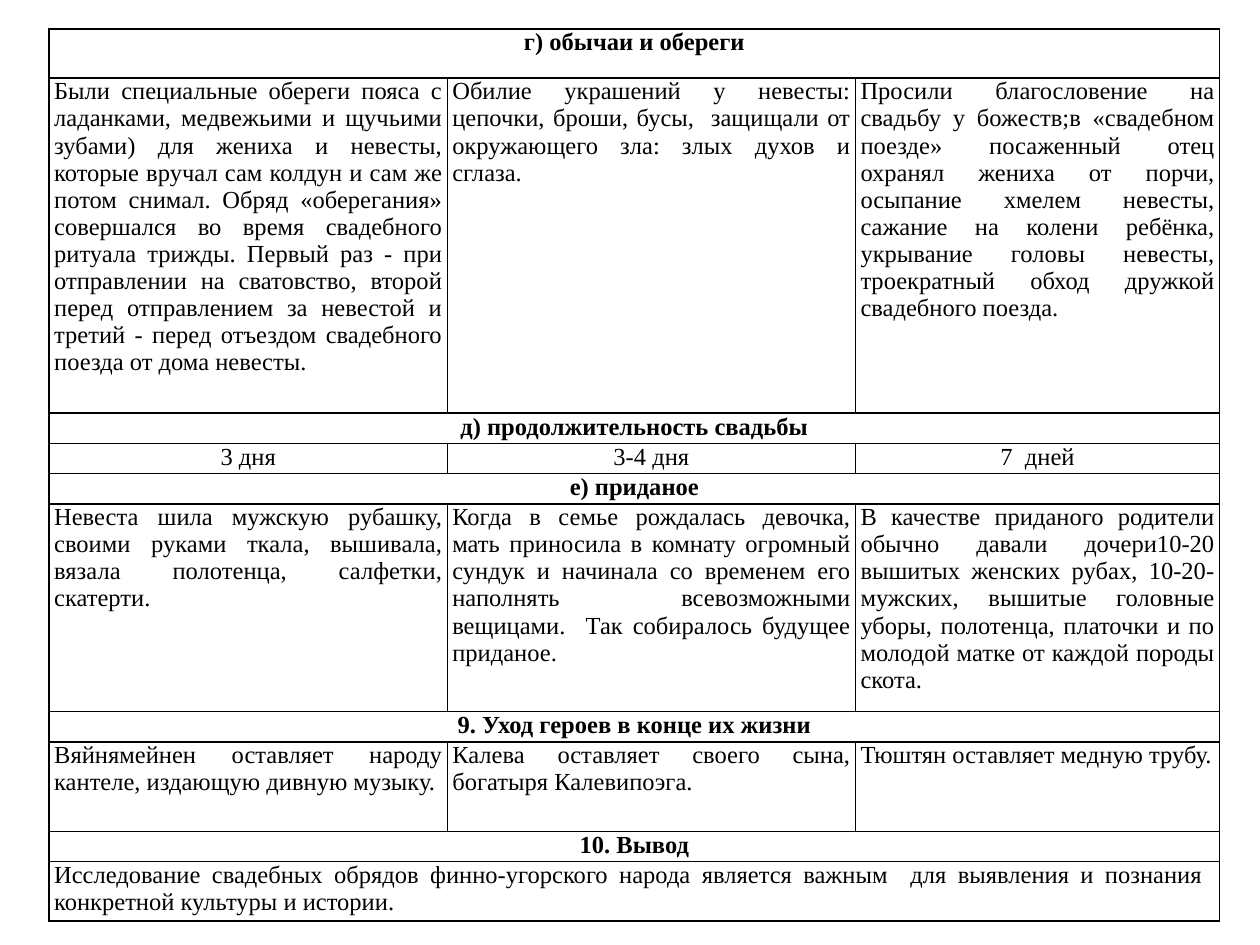
from lxml import etree
from pptx import Presentation
from pptx.dml.color import RGBColor
from pptx.enum import text
from pptx.oxml.ns import qn
from pptx.util import Inches, Pt

BLACK = RGBColor(0x00, 0x00, 0x00)
WHITE = RGBColor(0xFF, 0xFF, 0xFF)
FONT = "Times New Roman"
CENTER, JUSTIFY = text.PP_ALIGN.CENTER, text.PP_ALIGN.JUSTIFY

COL_WIDTHS = [3.16, 3.24, 2.89]
LINE = 0.24  # height of a one-line row

# Row height, alignment, bold, texts; a single text spans the whole row
ROWS = [
    (0.39, CENTER, True, ["г) обычаи и обереги"]),
    (2.66, JUSTIFY, False, [
        "Были специальные обереги пояса с ладанками, медвежьими и щучьими зубами) "
        "для жениха и невесты, которые вручал сам колдун и сам же потом снимал. "
        "Обряд «оберегания» совершался во время свадебного ритуала трижды. "
        "Первый раз - при отправлении на сватовство, второй перед отправлением "
        "за невестой и третий - перед отъездом свадебного поезда от дома невесты.",
        "Обилие украшений у невесты: цепочки, броши, бусы,  защищали от "
        "окружающего зла: злых духов и сглаза.",
        "Просили благословение на свадьбу у божеств;в «свадебном поезде» "
        "посаженный отец охранял жениха от порчи, осыпание хмелем невесты, "
        "сажание на колени ребёнка, укрывание головы невесты, троекратный обход "
        "дружкой свадебного поезда."]),
    (LINE, CENTER, True, ["д) продолжительность свадьбы"]),
    (LINE, CENTER, False, ["3 дня", "3-4 дня", "7  дней"]),
    (LINE, CENTER, True, ["е) приданое"]),
    (1.65, JUSTIFY, False, [
        "Невеста шила мужскую рубашку, своими руками ткала, вышивала, вязала "
        "полотенца, салфетки, скатерти.",
        "Когда в семье рождалась девочка, мать приносила в комнату огромный сундук "
        "и начинала со временем его наполнять всевозможными вещицами.  Так "
        "собиралось будущее приданое.",
        "В качестве приданого родители обычно давали дочери10-20 вышитых женских "
        "рубах, 10-20-мужских, вышитые головные уборы, полотенца, платочки и по "
        "молодой матке от каждой породы скота."]),
    (LINE, CENTER, True, ["9. Уход героев в конце их жизни"]),
    (0.71, JUSTIFY, False, [
        "Вяйнямейнен оставляет народу кантеле, издающую дивную музыку.",
        "Калева оставляет своего сына, богатыря Калевипоэга.",
        "Тюштян оставляет медную трубу."]),
    (LINE, CENTER, True, ["10. Вывод"]),
    (0.47, JUSTIFY, False, [
        "Исследование свадебных обрядов финно-угорского народа является важным  "
        "для выявления и познания  конкретной культуры и истории."]),
]


def style_cell(cell):
    """Set margins, black borders on all sides and a white fill."""
    cell.margin_left = cell.margin_right = Inches(0.04)
    cell.margin_top = cell.margin_bottom = 0
    tc_pr = cell._tc.get_or_add_tcPr()
    for side in ("a:lnL", "a:lnR", "a:lnT", "a:lnB"):
        ln = etree.SubElement(tc_pr, qn(side), w=str(Pt(1)))
        fill = etree.SubElement(ln, qn("a:solidFill"))
        etree.SubElement(fill, qn("a:srgbClr"), val=str(BLACK))
    cell.fill.solid()
    cell.fill.fore_color.rgb = WHITE


def write_cell(cell, content, align, bold):
    p = cell.text_frame.paragraphs[0]
    tabs = etree.SubElement(p._p.get_or_add_pPr(), qn("a:tabLst"))
    etree.SubElement(tabs, qn("a:tab"), pos=str(Inches(2.01)), algn="l")
    p.alignment = align
    p.space_after = Pt(6)
    r = p.add_run()
    r.text = content
    r.font.name = FONT
    r.font.size = Pt(14)
    r.font.bold = bold
    r.font.color.rgb = BLACK


def add_wedding_table(slide):
    frame = slide.shapes.add_table(
        len(ROWS), len(COL_WIDTHS), Inches(0.39), Inches(0.23),
        Inches(sum(COL_WIDTHS)), Inches(sum(row[0] for row in ROWS)))
    table = frame.table
    table.first_row = table.horz_banding = False
    for column, width in zip(table.columns, COL_WIDTHS):
        column.width = Inches(width)
    for i, (height, align, bold, texts) in enumerate(ROWS):
        table.rows[i].height = Inches(height)
        cells = list(table.rows[i].cells)
        for cell in cells:
            style_cell(cell)
        if len(texts) == 1:
            cells[0].merge(cells[-1])
        for cell, content in zip(cells, texts):
            write_cell(cell, content, align, bold)


def main():
    prs = Presentation()
    prs.slide_width, prs.slide_height = Inches(10), Inches(7.5)
    slide = prs.slides.add_slide(prs.slide_layouts[6])
    add_wedding_table(slide)
    prs.save("out.pptx")


if __name__ == "__main__":
    main()
